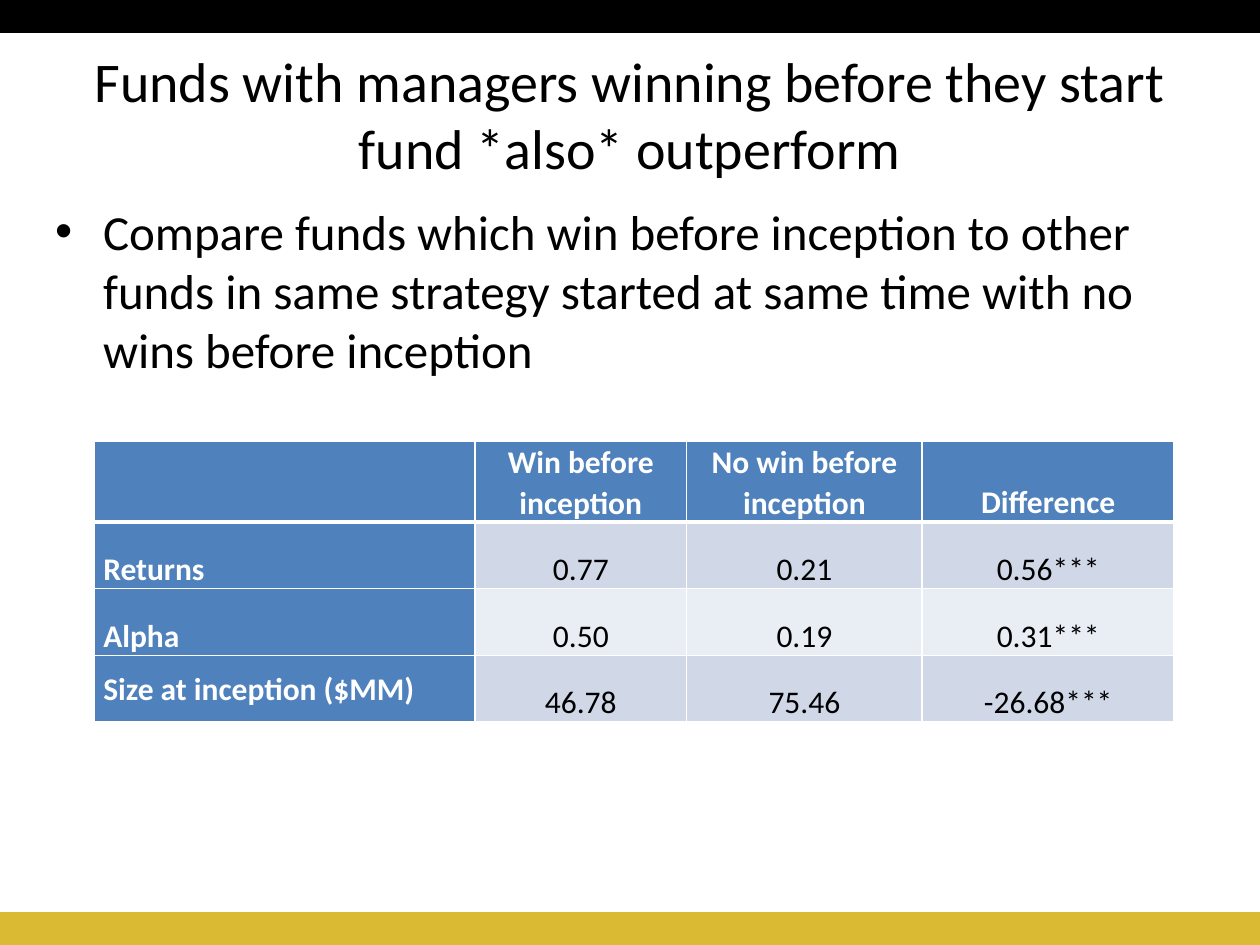
from dataclasses import dataclass

from lxml.etree import SubElement
from pptx import Presentation
from pptx.dml.color import RGBColor
from pptx.enum.shapes import MSO_SHAPE as Shape
from pptx.enum.text import MSO_ANCHOR as Anchor, PP_ALIGN as Align
from pptx.oxml.ns import qn
from pptx.util import Inches, Pt


@dataclass(frozen=True)
class Theme:
    font: str = "Calibri"
    title_size: int = 32
    body_size: int = 28
    table_size: int = 18
    black: str = "000000"
    white: str = "FFFFFF"
    gold: str = "DABA32"
    header: str = "4F81BD"
    bands: tuple[str, str] = ("D0D8E8", "E9EDF4")


@dataclass(frozen=True)
class Bar:
    top: float
    color: str


THEME = Theme()
BARS = (Bar(0, THEME.black), Bar(7.25, THEME.gold))
COLUMN_WIDTHS = (3.02, 1.68, 1.87, 2)
ROW_HEIGHTS = (0.64, 0.53, 0.53, 0.53)
RESULTS = (
    ("", "Win before inception", "No win before inception", "Difference"),
    ("Returns", "0.77", "0.21", "0.56***"),
    ("Alpha", "0.50", "0.19", "0.31***"),
    ("Size at inception ($MM)", "46.78", "75.46", "-26.68***"),
)


def style(paragraph, size: int, color: str, bold: bool = False) -> None:
    font = paragraph.font
    font.name, font.size, font.bold = THEME.font, Pt(size), bold
    font.color.rgb = RGBColor.from_string(color)


def add_text(slide, box: tuple, text: str, size: int, anchor: Anchor):
    """Add a wrapped text box and return its only paragraph."""
    frame = slide.shapes.add_textbox(*map(Inches, box)).text_frame
    frame.word_wrap = True
    frame.vertical_anchor = anchor
    paragraph = frame.paragraphs[0]
    paragraph.text = text
    style(paragraph, size, THEME.black)
    return paragraph


def add_bullet(paragraph, indent: float) -> None:
    properties = paragraph._p.get_or_add_pPr()
    properties.set("marL", str(Inches(indent)))
    properties.set("indent", str(-Inches(indent)))
    SubElement(properties, qn("a:buFont"), typeface="Arial")
    SubElement(properties, qn("a:buChar"), char="•")


def add_bar(slide, bar: Bar) -> None:
    shape = slide.shapes.add_shape(
        Shape.RECTANGLE, 0, Inches(bar.top), Inches(10), Inches(0.25))
    shape.shadow.inherit = False
    shape.fill.solid()
    shape.fill.fore_color.rgb = RGBColor.from_string(bar.color)
    shape.line.color.rgb = RGBColor.from_string(bar.color)
    shape.line.width = Pt(2)


def set_borders(cell, bottom_width: float) -> None:
    """Draw white borders, placed ahead of the fill as the schema requires."""
    properties = cell._tc.get_or_add_tcPr()
    widths = {"lnL": 1, "lnR": 1, "lnT": 1, "lnB": bottom_width}
    for position, (side, width) in enumerate(widths.items()):
        line = SubElement(properties, qn(f"a:{side}"), w=str(Pt(width)))
        fill = SubElement(line, qn("a:solidFill"))
        SubElement(fill, qn("a:srgbClr"), val=THEME.white)
        properties.insert(position, line)


def fill_cell(cell, text: str, row: int, column: int) -> None:
    is_heading = row == 0 or column == 0
    background = THEME.header if is_heading else THEME.bands[(row - 1) % 2]
    cell.fill.solid()
    cell.fill.fore_color.rgb = RGBColor.from_string(background)
    cell.margin_left = cell.margin_right = Inches(0.07)
    cell.margin_top = cell.margin_bottom = 0
    is_last_label = column == 0 and row == len(RESULTS) - 1
    cell.vertical_anchor = Anchor.MIDDLE if is_last_label else Anchor.BOTTOM
    cell.text = text
    paragraph = cell.text_frame.paragraphs[0]
    paragraph.alignment = Align.CENTER if column else Align.LEFT
    if is_heading:
        paragraph.line_spacing = 1.07
    style(paragraph, THEME.table_size,
          THEME.white if is_heading else THEME.black, is_heading)
    set_borders(cell, 3 if row == 0 else 1)


def add_results(slide) -> None:
    table = slide.shapes.add_table(
        len(ROW_HEIGHTS), len(COLUMN_WIDTHS), Inches(0.75), Inches(3.5),
        Inches(sum(COLUMN_WIDTHS)), Inches(sum(ROW_HEIGHTS))).table
    for column, width in zip(table.columns, COLUMN_WIDTHS):
        column.width = Inches(width)
    for row, height in zip(table.rows, ROW_HEIGHTS):
        row.height = Inches(height)
    for r, values in enumerate(RESULTS):
        for c, value in enumerate(values):
            fill_cell(table.cell(r, c), value, r, c)


def main() -> None:
    deck = Presentation()
    deck.slide_width, deck.slide_height = Inches(10), Inches(7.5)
    slide = deck.slides.add_slide(deck.slide_layouts[6])

    title = add_text(
        slide, (0.5, 0.55, 9, 0.7),
        "Funds with managers winning before they start fund *also* outperform",
        THEME.title_size, Anchor.MIDDLE)
    title.alignment = Align.CENTER
    for bar in BARS:
        add_bar(slide, bar)

    comparison = add_text(
        slide, (0.34, 1.55, 9.16, 5.48),
        "Compare funds which win before inception to other funds in same "
        "strategy started at same time with no wins before inception",
        THEME.body_size, Anchor.TOP)
    comparison.space_before = Pt(0.2 * THEME.body_size)
    add_bullet(comparison, 0.38)
    add_results(slide)
    deck.save("out.pptx")


if __name__ == "__main__":
    main()
